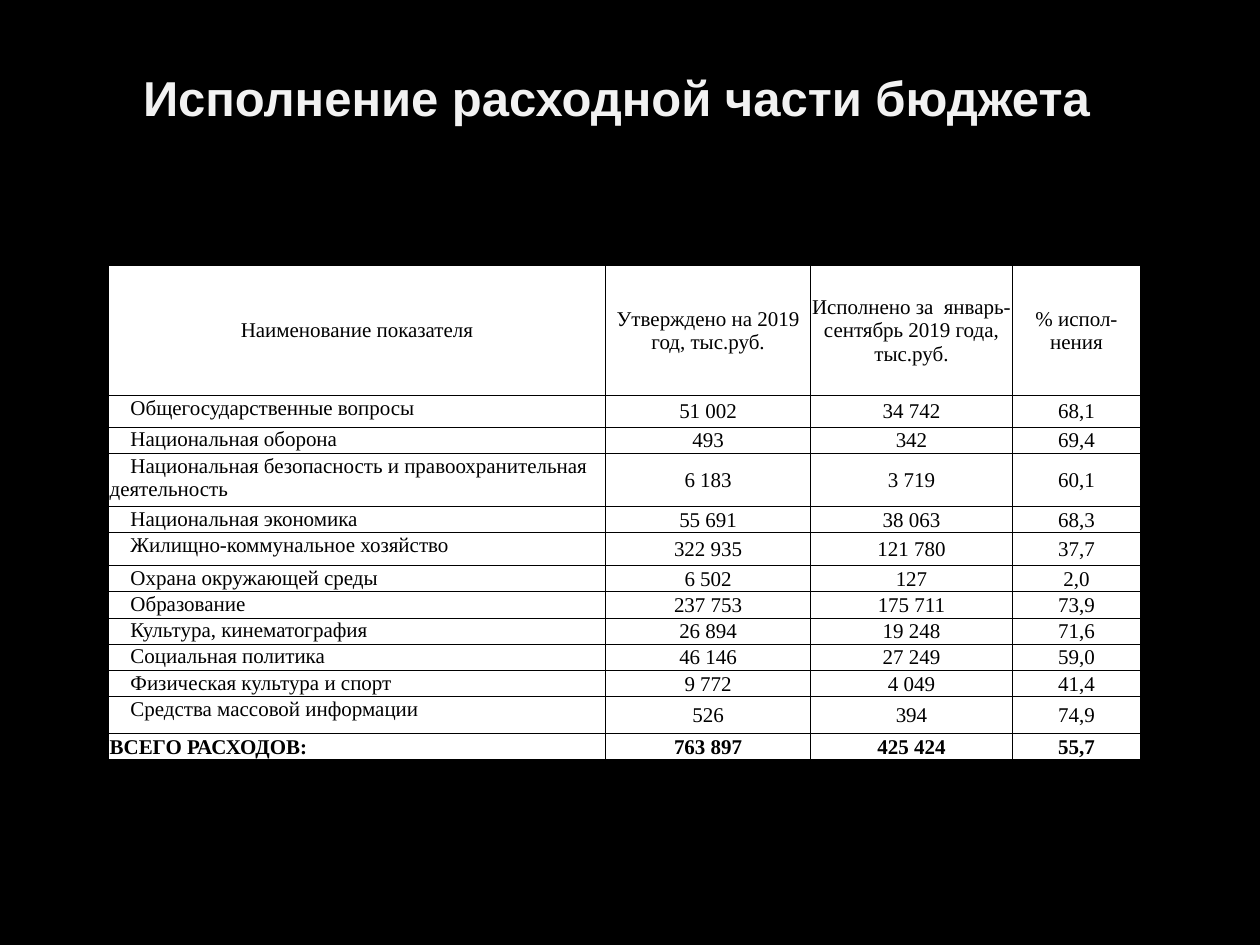
from lxml.etree import SubElement
from pptx import Presentation
from pptx.dml.color import RGBColor
from pptx.enum.text import MSO_ANCHOR, PP_ALIGN
from pptx.oxml.ns import qn
from pptx.util import Cm, Pt

BLACK, WHITE, TITLE_GREY = "000000", "FFFFFF", "F2F2F2"
COLUMN_WIDTHS = [10.02, 4.13, 4.07, 2.58]
HEADER_HEIGHT, ROW_HEIGHT = 2.62, 0.51
TALL_ROWS = {1: 0.64, 3: 1.07, 5: 0.66, 11: 0.74}

HEADER = ["Наименование показателя", "Утверждено на 2019 год, тыс.руб.",
          "Исполнено за  январь-сентябрь 2019 года, тыс.руб.", "% испол-нения"]
EXPENSES = [
    ["Общегосударственные вопросы", "51 002", "34 742", "68,1"],
    ["Национальная оборона", "493", "342", "69,4"],
    ["Национальная безопасность и правоохранительная деятельность",
     "6 183", "3 719", "60,1"],
    ["Национальная экономика", "55 691", "38 063", "68,3"],
    ["Жилищно-коммунальное хозяйство", "322 935", "121 780", "37,7"],
    ["Охрана окружающей среды", "6 502", "127", "2,0"],
    ["Образование", "237 753", "175 711", "73,9"],
    ["Культура, кинематография", "26 894", "19 248", "71,6"],
    ["Социальная политика", "46 146", "27 249", "59,0"],
    ["Физическая культура и спорт", "9 772", "4 049", "41,4"],
    ["Средства массовой информации", "526", "394", "74,9"],
]
TOTAL = ["ВСЕГО РАСХОДОВ:", "763 897", "425 424", "55,7"]


def rgb(color):
    return RGBColor.from_string(color)


def write(frame, text, *, font="Times New Roman", size=12, color=BLACK,
          bold=False, align=PP_ALIGN.CENTER, indent=0):
    frame.word_wrap = True
    paragraph = frame.paragraphs[0]
    paragraph.alignment = align
    if indent:
        properties = paragraph._p.get_or_add_pPr()
        properties.set("marL", "0")
        properties.set("indent", str(Cm(indent)))
    run = paragraph.add_run()
    run.text = text
    run.font.name, run.font.size, run.font.bold = font, Pt(size), bold
    run.font.color.rgb = rgb(color)


def add_borders(cell, color=BLACK, width=0.5):
    properties = cell._tc.get_or_add_tcPr()
    for side in ("lnL", "lnR", "lnT", "lnB"):
        line = SubElement(properties, qn(f"a:{side}"), w=str(Pt(width)))
        fill = SubElement(line, qn("a:solidFill"))
        SubElement(fill, qn("a:srgbClr"), val=color)


def fill_cell(cell, text, *, anchor=MSO_ANCHOR.MIDDLE, **text_format):
    add_borders(cell)
    cell.fill.solid()
    cell.fill.fore_color.rgb = rgb(WHITE)
    cell.margin_left = cell.margin_right = cell.margin_top = Cm(0.02)
    cell.margin_bottom = 0
    cell.vertical_anchor = anchor
    write(cell.text_frame, text, **text_format)


def add_title(slide, left, top, width, height):
    heading = slide.shapes.add_textbox(Cm(left), Cm(top), Cm(width), Cm(height))
    frame = heading.text_frame
    frame.vertical_anchor = MSO_ANCHOR.MIDDLE
    frame.margin_right = Cm(0.8)  # sets the heading slightly left of centre
    write(frame, "Исполнение расходной части бюджета",
          font="Arial", size=28, color=TITLE_GREY, bold=True)


def add_expense_table(slide, left, top):
    rows = [HEADER, *EXPENSES, TOTAL]
    last = len(rows) - 1
    heights = [HEADER_HEIGHT] + [TALL_ROWS.get(r, ROW_HEIGHT)
                                 for r in range(1, len(rows))]
    expenses = slide.shapes.add_table(
        len(rows), len(HEADER), Cm(left), Cm(top),
        Cm(sum(COLUMN_WIDTHS)), Cm(sum(heights))).table
    for column, width in zip(expenses.columns, COLUMN_WIDTHS):
        column.width = Cm(width)
    for row, height in zip(expenses.rows, heights):
        row.height = Cm(height)

    for r, values in enumerate(rows):
        for c, value in enumerate(values):
            text_format = {"bold": r == last}
            # Names of the expense items and of the total
            if c == 0 and r > 0:
                text_format["align"] = PP_ALIGN.LEFT
                text_format["anchor"] = MSO_ANCHOR.BOTTOM if r == last else MSO_ANCHOR.TOP
                text_format["indent"] = 0 if r == last else 0.42
            fill_cell(expenses.cell(r, c), value, **text_format)


def main():
    deck = Presentation()
    deck.slide_width, deck.slide_height = Cm(25.4), Cm(19.05)
    slide = deck.slides.add_slide(deck.slide_layouts[6])
    slide.background.fill.solid()
    slide.background.fill.fore_color.rgb = rgb(BLACK)

    add_title(slide, 1.27, 0.74, 22.86, 2.44)
    add_expense_table(slide, 2.19, 5.35)
    deck.save("out.pptx")


if __name__ == "__main__":
    main()
